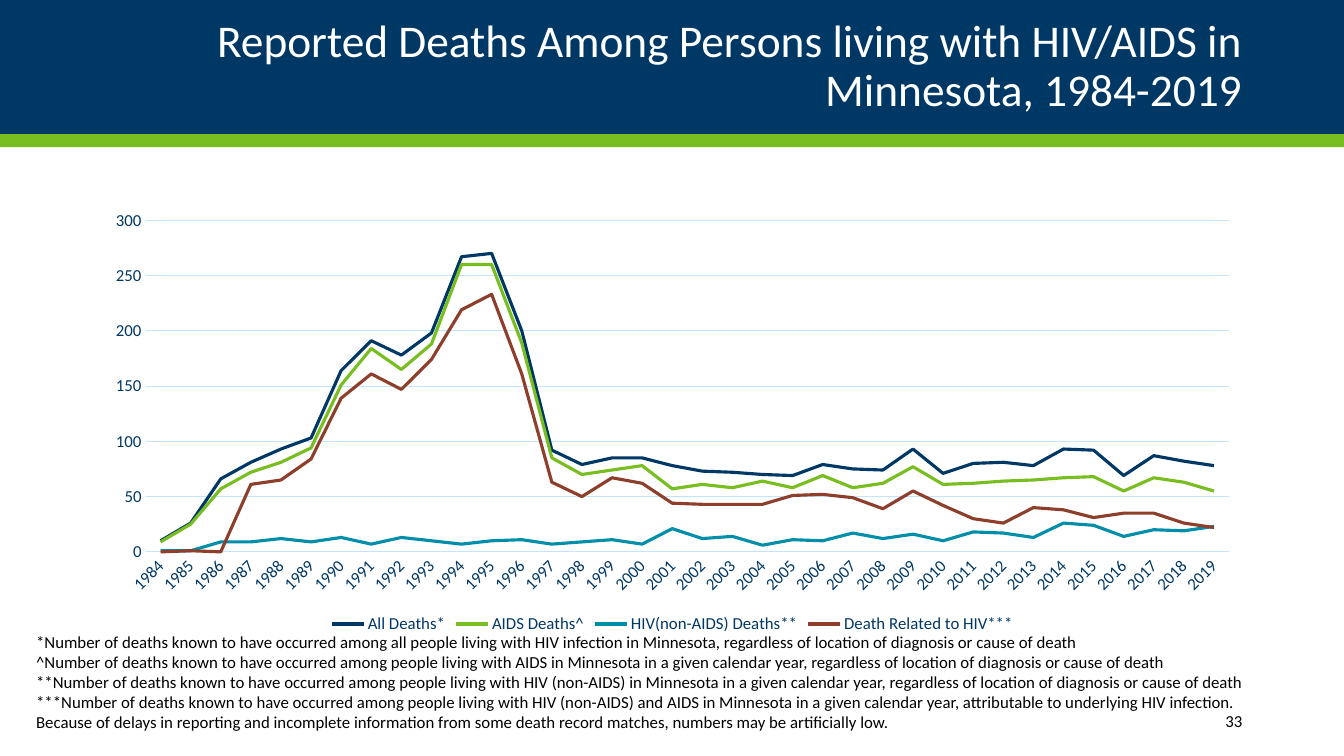
import pptx
import pptx.chart.data
import pptx.dml.color
import pptx.enum.chart
import pptx.enum.shapes
import pptx.enum.text
import pptx.util
from dataclasses import dataclass

PX = 9144  # 100 px to the inch
SLIDE_WIDTH, SLIDE_HEIGHT = 1333, 750
ALIGN = pptx.enum.text.PP_ALIGN


@dataclass(frozen=True)
class Theme:
    font: str = "Calibri"
    navy: str = "003865"
    green: str = "78BE21"
    teal: str = "008EAA"
    rust: str = "8D3F2B"
    grid: str = "C2E4FF"
    white: str = "FFFFFF"
    black: str = "000000"
    title_size: float = 32.4
    body_size: float = 12
    grid_width: float = 0.75
    series_width: float = 2.25


THEME = Theme()

YEARS = [str(year) for year in range(1984, 2020)]
DEATHS = [
    ("All Deaths*", THEME.navy,
     [10, 26, 66, 81, 93, 103, 164, 191, 178, 198, 267, 270,
      200, 92, 79, 85, 85, 78, 73, 72, 70, 69, 79, 75,
      74, 93, 71, 80, 81, 78, 93, 92, 69, 87, 82, 78]),
    ("AIDS Deaths^", THEME.green,
     [9, 25, 57, 72, 81, 94, 151, 184, 165, 188, 260, 260,
      189, 85, 70, 74, 78, 57, 61, 58, 64, 58, 69, 58,
      62, 77, 61, 62, 64, 65, 67, 68, 55, 67, 63, 55]),
    ("HIV(non-AIDS) Deaths**", THEME.teal,
     [1, 1, 9, 9, 12, 9, 13, 7, 13, 10, 7, 10,
      11, 7, 9, 11, 7, 21, 12, 14, 6, 11, 10, 17,
      12, 16, 10, 18, 17, 13, 26, 24, 14, 20, 19, 23]),
    ("Death Related to HIV***", THEME.rust,
     [0, 1, 0, 61, 65, 84, 139, 161, 147, 174, 219, 233,
      161, 63, 50, 67, 62, 44, 43, 43, 43, 51, 52, 49,
      39, 55, 42, 30, 26, 40, 38, 31, 35, 35, 26, 22]),
]
FOOTNOTES = [
    "*Number of deaths known to have occurred among all people living with HIV infection in Minnesota, "
    "regardless of location of diagnosis or cause of death",
    "^Number of deaths known to have occurred among people living with AIDS in Minnesota in a given "
    "calendar year, regardless of location of diagnosis or cause of death",
    "**Number of deaths known to have occurred among people living with HIV (non-AIDS) in Minnesota in a "
    "given calendar year, regardless of location of diagnosis or cause of death",
    "***Number of deaths known to have occurred among people living with HIV (non-AIDS) and AIDS in "
    "Minnesota in a given calendar year, attributable to underlying HIV infection. Because of delays in "
    "reporting and incomplete information from some death record matches, numbers may be artificially low.",
]


def emu(box):
    return [length * PX for length in box]


def rgb(color):
    return pptx.dml.color.RGBColor.from_string(color)


def apply_format(target, **values):
    for key, value in values.items():
        setattr(target, key, value)


def style_font(font, color, size=THEME.body_size):
    apply_format(font, name=THEME.font, size=pptx.util.Pt(size), bold=False)
    font.color.rgb = rgb(color)


def style_line(line, color, width):
    line.color.rgb = rgb(color)
    line.width = pptx.util.Pt(width)


def fill_text(frame, lines, color, size=THEME.body_size, **paragraph_format):
    apply_format(frame, word_wrap=True, auto_size=pptx.enum.text.MSO_AUTO_SIZE.NONE,
                 vertical_anchor=pptx.enum.text.MSO_ANCHOR.MIDDLE)
    frame.text = "\n".join(lines)
    for paragraph in frame.paragraphs:
        apply_format(paragraph, **paragraph_format)
        style_font(paragraph.runs[0].font, color, size)


def add_band(slide, box, color):
    """Add a plain bar behind the title placeholder."""
    band = slide.shapes.add_shape(pptx.enum.shapes.MSO_SHAPE.RECTANGLE, *emu(box))
    band.shadow.inherit = False
    band.fill.solid()
    band.fill.fore_color.rgb = rgb(color)
    band.line.fill.background()
    slide.shapes.title._element.addprevious(band._element)


def add_header(slide, box, text):
    left, top, width, height = box
    stripe_height = 13
    navy_height = height - stripe_height
    add_band(slide, (left, top, width, navy_height), THEME.navy)
    add_band(slide, (left, top + navy_height, width, stripe_height), THEME.green)
    title = slide.shapes.title
    title_box = emu((left + 92, top + 17, width - 183, 100))
    apply_format(title, **dict(zip(("left", "top", "width", "height"), title_box)))
    fill_text(title.text_frame, [text], THEME.white, THEME.title_size,
              alignment=ALIGN.RIGHT, line_spacing=0.9)


def add_deaths_chart(slide, box):
    data = pptx.chart.data.CategoryChartData()
    data.categories = YEARS
    for name, _, counts in DEATHS:
        data.add_series(name, counts)
    chart = slide.shapes.add_chart(pptx.enum.chart.XL_CHART_TYPE.LINE, *emu(box), data).chart
    style_font(chart.font, THEME.navy)
    apply_format(chart, has_title=False, has_legend=True)
    apply_format(chart.legend, position=pptx.enum.chart.XL_LEGEND_POSITION.BOTTOM,
                 include_in_layout=False)
    style_font(chart.legend.font, THEME.navy)
    chart.plots[0].vary_by_categories = False

    years, counts = chart.category_axis, chart.value_axis
    for axis in (years, counts):
        apply_format(axis, major_tick_mark=pptx.enum.chart.XL_TICK_MARK.NONE,
                     minor_tick_mark=pptx.enum.chart.XL_TICK_MARK.NONE)
        style_font(axis.tick_labels.font, THEME.navy)
    style_line(years.format.line, THEME.grid, THEME.grid_width)
    years._element.txPr.bodyPr.set("rot", str(-45 * 60000))
    apply_format(counts, minimum_scale=0, maximum_scale=300, major_unit=50,
                 has_major_gridlines=True)
    counts.format.line.fill.background()
    style_line(counts.major_gridlines.format.line, THEME.grid, THEME.grid_width)

    for series, (_, color, _) in zip(chart.plots[0].series, DEATHS):
        series.smooth = False
        series.marker.style = pptx.enum.chart.XL_MARKER_STYLE.NONE
        style_line(series.format.line, color, THEME.series_width)


def add_note(slide, box, lines, alignment):
    note = slide.shapes.add_textbox(*emu(box))
    fill_text(note.text_frame, lines, THEME.black, alignment=alignment)


def build_deaths_slide(deck):
    slide = deck.slides.add_slide(deck.slide_layouts.get_by_name("Title Only"))
    add_header(slide, (0, 0, SLIDE_WIDTH, 146),
               "Reported Deaths Among Persons living with HIV/AIDS in Minnesota, 1984-2019")
    add_deaths_chart(slide, (92, 200, 1150, 433))
    add_note(slide, (1082, 695, 160, 40), ["33"], ALIGN.RIGHT)
    add_note(slide, (26, 625, 1242, 103), FOOTNOTES, ALIGN.LEFT)


def main():
    deck = pptx.Presentation()
    apply_format(deck, slide_width=SLIDE_WIDTH * PX, slide_height=SLIDE_HEIGHT * PX)
    build_deaths_slide(deck)
    deck.save("out.pptx")


if __name__ == "__main__":
    main()
